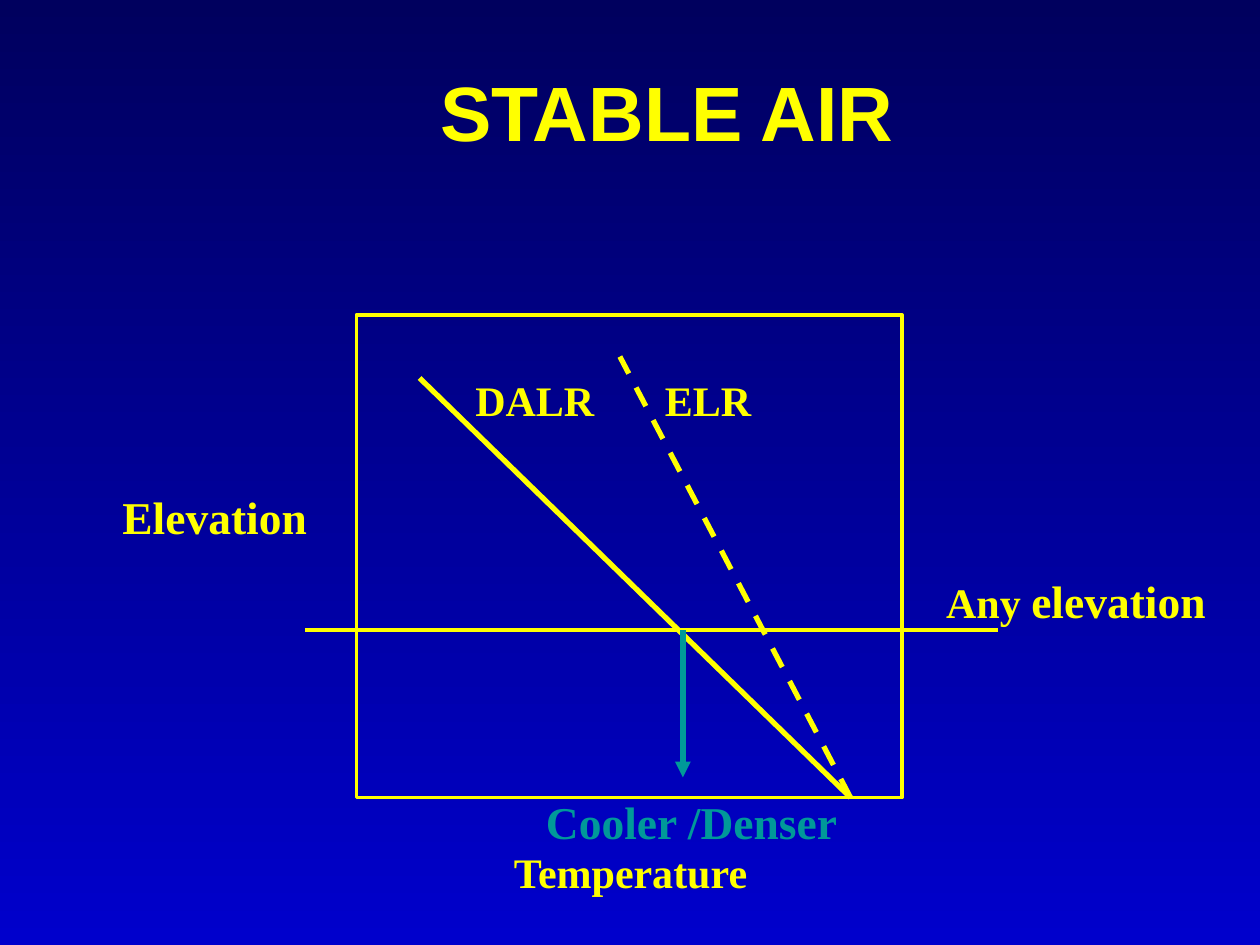
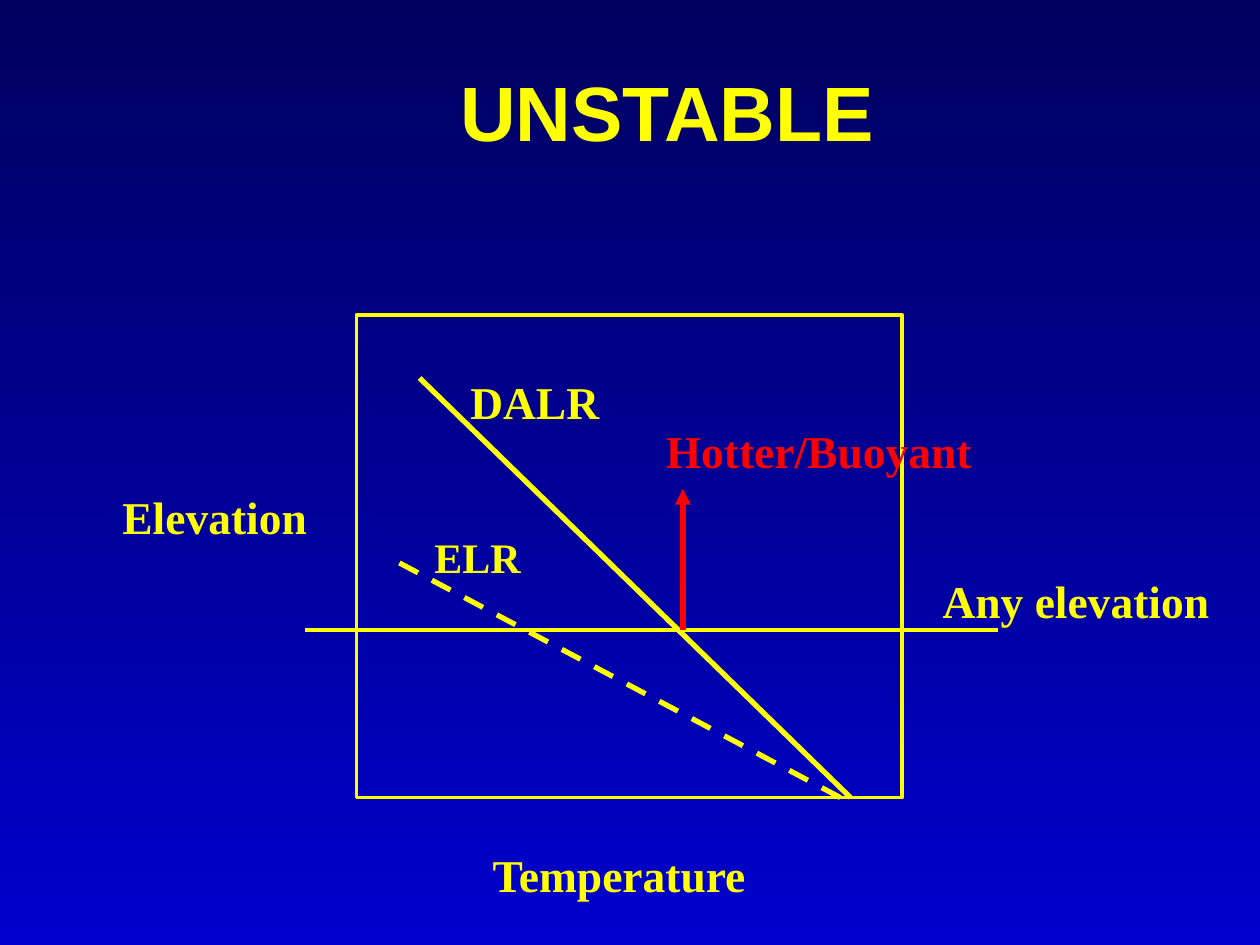
import pptx
import pptx.dml.color
import pptx.enum.dml
import pptx.enum.shapes
import pptx.enum.text
import pptx.oxml
import pptx.oxml.ns
import pptx.util

Inches = pptx.util.Inches
YELLOW, TEAL, RED = "FFFF00", "009999", "FF0000"
SKY_TOP, SKY_BOTTOM = "00005E", "0000CC"
HEADING_FONT, LABEL_FONT = "Arial", "Times New Roman"
TITLE_BOX = (0.92, 0.25, 8.75, 1.25)
GRAPH_BOX = (2.83, 2.5, 4.33, 3.83)
LABEL_HEIGHT = {24: 0.5, 26: 0.53}

# Positions inside a graph are measured from its top left corner.
# Labels: runs of (text, size), then left, top and width.
GRAPHS = [
    {
        "title": "STABLE AIR",
        "environment_line": ((3.92, 3.83), (2.09, 0.33)),
        "motion": ((2.59, 2.5), (2.59, 3.67), TEAL),
        "labels": [
            ([("Temperature", 24)], (-0.16, 4.17, 4.67), YELLOW),
            ([("ELR", 24)], (2.25, 0.42, 1.08), YELLOW),
            ([("DALR", 24)], (0.75, 0.42, 1.33), YELLOW),
            ([("Any ", 24), ("elevation", 26)], (4.5, 2, 2.42), YELLOW),
            ([("Cooler /Denser", 26)], (1.34, 3.75, 2.64), TEAL),
        ],
    },
    {
        "title": "UNSTABLE",
        "environment_line": ((3.84, 3.83), (0.25, 1.92)),
        "motion": ((2.59, 2.5), (2.59, 1.38), RED),
        "labels": [
            ([("Temperature", 26)], (-0.25, 4.17, 4.67), YELLOW),
            ([("ELR", 24)], (0.42, 1.67, 1.08), YELLOW),
            ([("DALR", 26)], (0.75, 0.42, 1.33), YELLOW),
            ([("Any elevation", 26)], (4.5, 2, 2.42), YELLOW),
            ([("Hotter/Buoyant", 26)], (2.2, 0.81, 2.94), RED),
        ],
    },
]
SHARED_LABELS = [([("Elevation", 26)], (-2, 1.33, 1.75), YELLOW)]


def rgb(value):
    return pptx.dml.color.RGBColor.from_string(value)


def add_text(slide, box, runs, colour, font, anchor="TOP"):
    frame = slide.shapes.add_textbox(*map(Inches, box)).text_frame
    frame.word_wrap = True
    frame.vertical_anchor = getattr(pptx.enum.text.MSO_ANCHOR, anchor)
    paragraph = frame.paragraphs[0]
    paragraph.alignment = pptx.enum.text.PP_ALIGN.CENTER
    for text, size in runs:
        run = paragraph.add_run()
        run.text = text
        run.font.color.rgb = rgb(colour)
        formats = {"name": font, "size": pptx.util.Pt(size), "bold": True}
        for key, value in formats.items():
            setattr(run.font, key, value)


def add_line(slide, origin, start, end, colour=YELLOW, width=3, dashed=False, arrow=False):
    left, top = origin
    ends = [Inches(a + b) for point in (start, end) for a, b in zip(point, (left, top))]
    connector = slide.shapes.add_connector(pptx.enum.shapes.MSO_CONNECTOR.STRAIGHT, *ends)
    connector.line.color.rgb = rgb(colour)
    connector.line.width = pptx.util.Pt(width)
    if dashed:
        connector.line.dash_style = pptx.enum.dml.MSO_LINE.DASH
    if arrow:
        outline = connector.line._get_or_add_ln()
        head = pptx.oxml.ns.qn("a:tailEnd")
        outline.append(outline.makeelement(head, {"type": "triangle"}))
    properties = connector._element.spPr
    properties.append(properties.makeelement(pptx.oxml.ns.qn("a:effectLst"), {}))


def paint_sky(slide):
    fill = slide.background.fill
    fill.gradient()
    fill.gradient_angle = 270
    for stop, colour in zip(fill.gradient_stops, (SKY_TOP, SKY_BOTTOM)):
        stop.color.rgb = rgb(colour)


def draw_graph(slide, box, graph):
    """Plot the lapse rates, the chosen elevation and the motion of the air."""
    origin = left, top = box[:2]
    frame = slide.shapes.add_shape(pptx.enum.shapes.MSO_SHAPE.RECTANGLE, *map(Inches, box))
    frame.shadow.inherit = False
    frame.fill.background()
    frame.line.color.rgb = rgb(YELLOW)
    frame.line.width = pptx.util.Pt(2.25)

    add_line(slide, origin, (3.92, 3.83), (0.5, 0.5))
    add_line(slide, origin, (-0.41, 2.5), (5.09, 2.5), width=2.25)
    add_line(slide, origin, *graph["motion"], arrow=True)
    add_line(slide, origin, *graph["environment_line"], dashed=True)
    for runs, (x, y, width), colour in SHARED_LABELS + graph["labels"]:
        height = LABEL_HEIGHT[max(size for _, size in runs)]
        add_text(slide, (left + x, top + y, width, height), runs, colour, LABEL_FONT)


def add_stability_slide(deck, graph):
    slide = deck.slides.add_slide(deck.slide_layouts[6])
    paint_sky(slide)
    add_text(slide, TITLE_BOX, [(graph["title"], 44)], YELLOW, HEADING_FONT, "MIDDLE")
    draw_graph(slide, GRAPH_BOX, graph)


def main():
    deck = pptx.Presentation()
    deck.slide_width, deck.slide_height = Inches(10), Inches(7.5)
    for graph in GRAPHS:
        add_stability_slide(deck, graph)
    deck.save("out.pptx")


if __name__ == "__main__":
    main()
